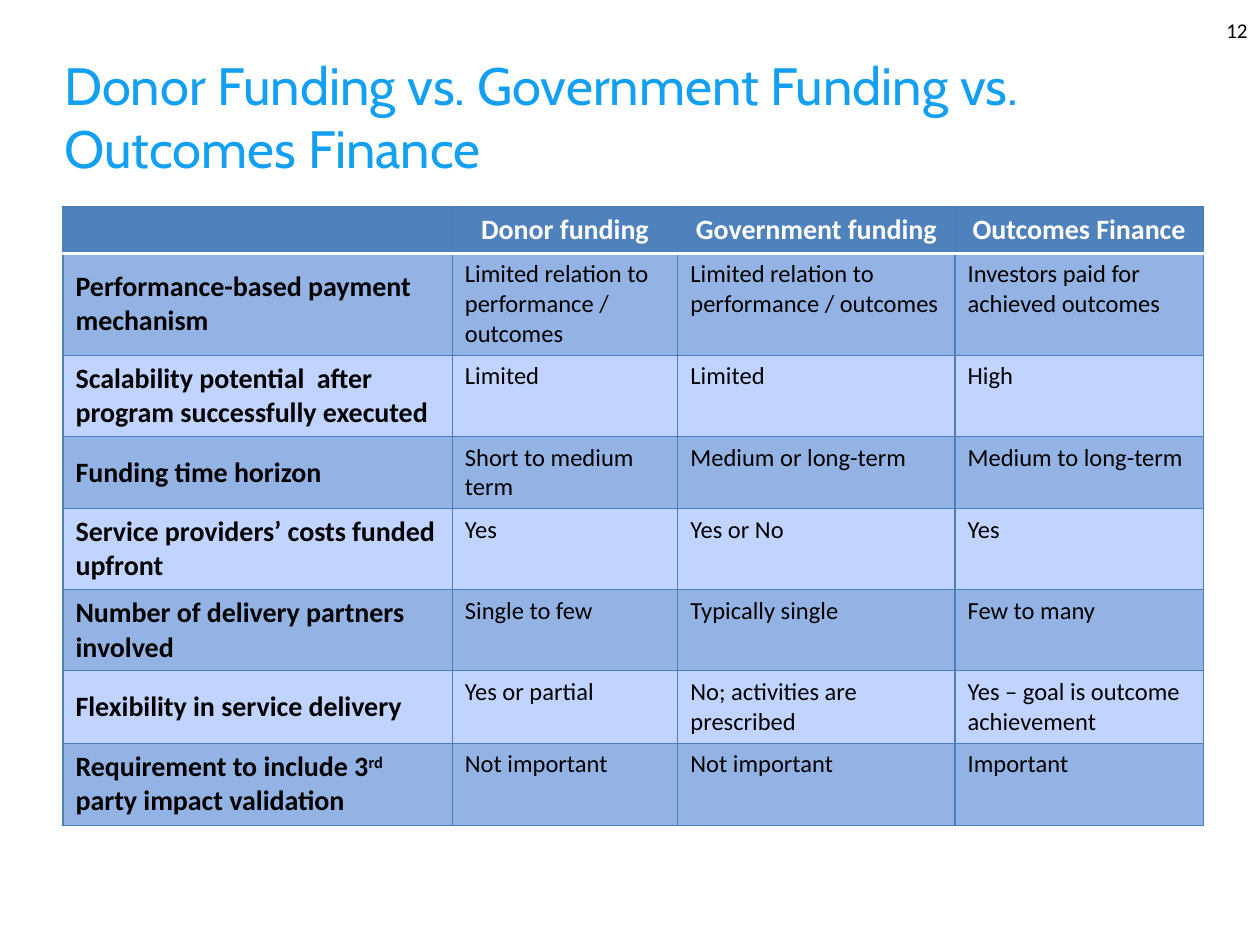
"""Build a slide that compares donor funding, government funding and outcomes finance."""
from dataclasses import dataclass

from lxml import etree
from pptx import Presentation
from pptx.dml.color import RGBColor
from pptx.enum.text import MSO_ANCHOR as Anchor, MSO_AUTO_SIZE as AutoSize, PP_ALIGN as Align
from pptx.oxml.ns import qn
from pptx.util import Inches, Pt


@dataclass(frozen=True)
class Theme:
    title_color: str = "13A0F2"
    header_fill: str = "4F81BD"
    dark_band: str = "93B3E5"
    light_band: str = "C0D4FF"
    border: str = "4B7EBC"
    white: str = "FFFFFF"
    black: str = "000000"
    title_font: str = "Cabin"
    body_font: str = "Calibri"
    title_size: int = 30
    label_size: int = 16
    cell_size: int = 14
    number_size: int = 12


theme = Theme()


def write_text(frame, text, *, size, color=theme.black, font=theme.body_font,
               bold=False, align=Align.LEFT, anchor=Anchor.TOP):
    """Write text into a frame; a part between carets is superscript."""
    frame.word_wrap = True
    frame.vertical_anchor = anchor
    paragraph = frame.paragraphs[0]
    paragraph.alignment = align
    for index, part in enumerate(text.split("^")):
        run = paragraph.add_run()
        run.text = part
        run.font.size = Pt(size)
        run.font.name = font
        run.font.bold = bold
        run.font.color.rgb = RGBColor.from_string(color)
        if index % 2:
            run._r.get_or_add_rPr().set("baseline", "30000")


def set_borders(cell, **white_sides):
    """Draw all four borders of a cell, with a thick white line on the named sides."""
    properties = cell._tc.get_or_add_tcPr()
    for position, side in enumerate("LRTB"):
        white = white_sides.get(side, False)
        line = etree.Element(qn(f"a:ln{side}"), w=str(Pt(2 if white else 0.75)))
        fill = etree.SubElement(line, qn("a:solidFill"))
        etree.SubElement(fill, qn("a:srgbClr"), val=theme.white if white else theme.border)
        properties.insert(position, line)


presentation = Presentation()
presentation.slide_width = Inches(10)
presentation.slide_height = Inches(7.5)
slide = presentation.slides.add_slide(presentation.slide_layouts[5])

title = slide.shapes.title
title.left, title.top = Inches(0.41), Inches(0.37)
title.width, title.height = Inches(8.86), Inches(0.73)
title.text_frame.auto_size = AutoSize.NONE
write_text(title.text_frame, "Donor Funding vs. Government Funding vs. Outcomes Finance",
           size=theme.title_size, color=theme.title_color, font=theme.title_font)

rows = [
    ("", "Donor funding", "Government funding", "Outcomes Finance"),
    ("Performance-based payment mechanism", "Limited relation to performance / outcomes",
     "Limited relation to performance / outcomes", "Investors paid for achieved outcomes"),
    ("Scalability potential  after program successfully executed", "Limited", "Limited", "High"),
    ("Funding time horizon", "Short to medium term", "Medium or long-term", "Medium to long-term"),
    ("Service providers’ costs funded upfront", "Yes", "Yes or No", "Yes"),
    ("Number of delivery partners involved", "Single to few", "Typically single", "Few to many"),
    ("Flexibility in service delivery", "Yes or partial", "No; activities are prescribed",
     "Yes – goal is outcome achievement"),
    ("Requirement to include 3^rd^ party impact validation", "Not important", "Not important",
     "Important"),
]
column_widths = [3.09, 1.79, 2.2, 1.97]
row_heights = [0.37, 0.81, 0.64, 0.57, 0.64, 0.64, 0.57, 0.65]

table = slide.shapes.add_table(len(rows), len(column_widths), Inches(0.5), Inches(1.64),
                               Inches(sum(column_widths)), Inches(sum(row_heights))).table
for column, width in zip(table.columns, column_widths):
    column.width = Inches(width)
for row, height in zip(table.rows, row_heights):
    row.height = Inches(height)

for row_index, texts in enumerate(rows):
    is_header = row_index == 0
    band = theme.dark_band if row_index % 2 else theme.light_band
    for column_index, text in enumerate(texts):
        cell = table.cell(row_index, column_index)
        is_label = is_header or column_index == 0
        cell.fill.solid()
        cell.fill.fore_color.rgb = RGBColor.from_string(theme.header_fill if is_header else band)
        set_borders(cell, T=row_index == 1, B=is_header)
        cell.vertical_anchor = Anchor.MIDDLE if is_label else Anchor.TOP
        if is_header:
            cell.margin_top = cell.margin_bottom = Inches(0.03)
        write_text(cell.text_frame, text, bold=is_label,
                   size=theme.label_size if is_label else theme.cell_size,
                   color=theme.white if is_header else theme.black,
                   align=Align.CENTER if is_header else Align.LEFT)

page_number = slide.shapes.add_textbox(Inches(9.56), Inches(0.04), Inches(0.44), Inches(0.4))
write_text(page_number.text_frame, "12", size=theme.number_size,
           align=Align.RIGHT, anchor=Anchor.MIDDLE)

presentation.save("out.pptx")
